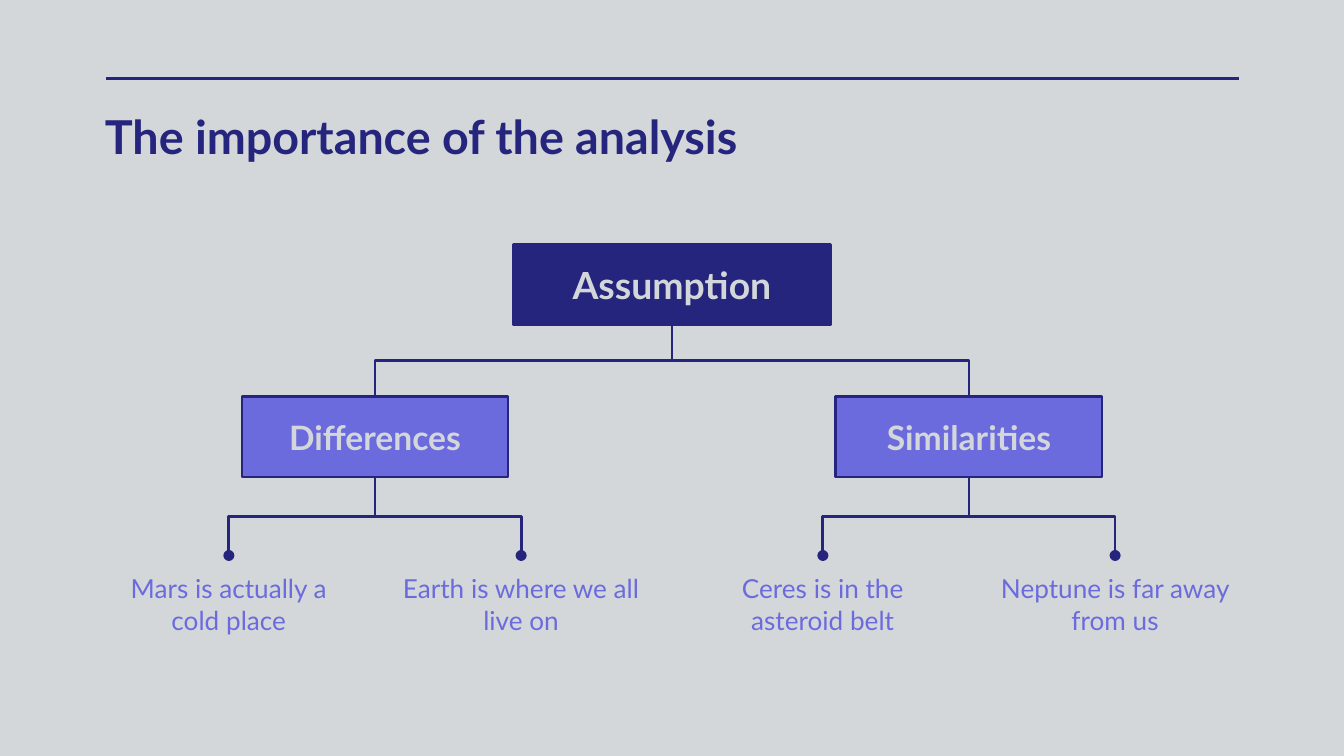
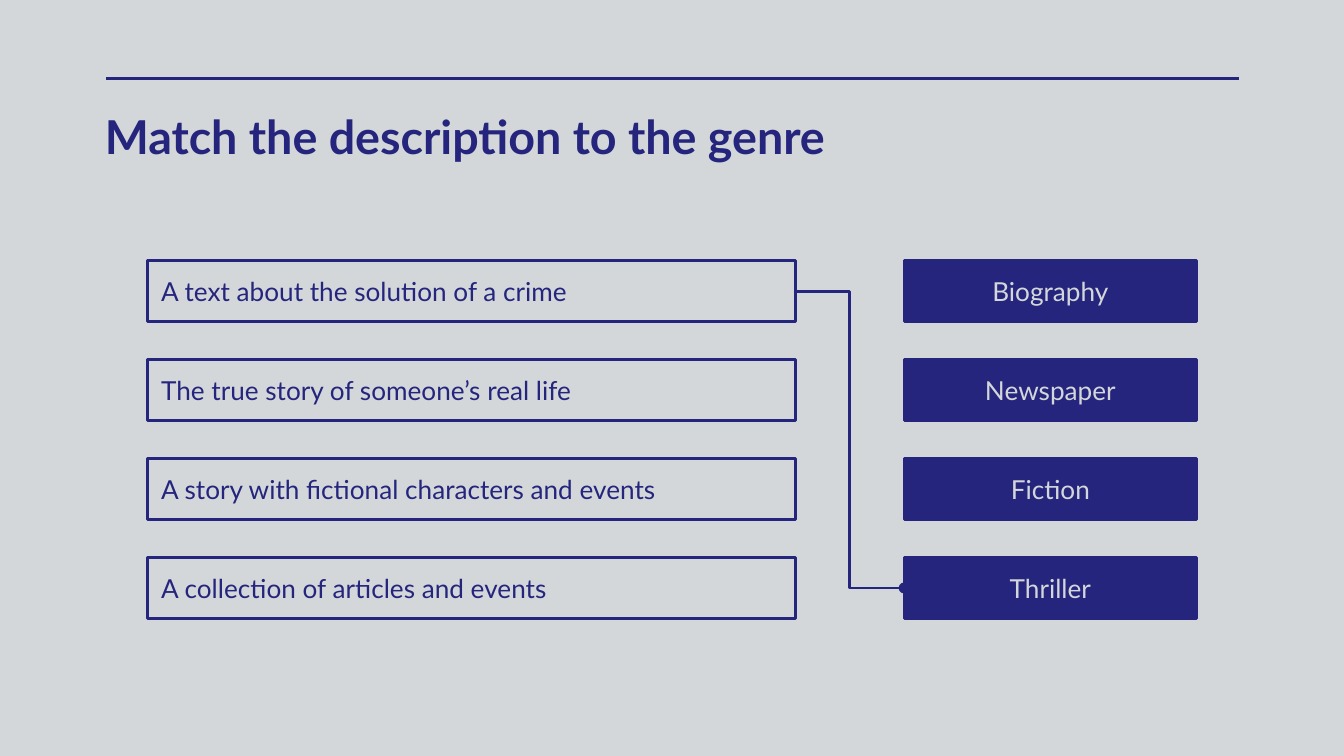
from dataclasses import dataclass
from typing import Any, Optional

import pptx
import pptx.dml.color
import pptx.enum.shapes
import pptx.enum.text
import pptx.oxml.ns
import pptx.util
from lxml import etree

Pt = pptx.util.Pt
RGBColor = pptx.dml.color.RGBColor
Align = pptx.enum.text.PP_ALIGN
Anchor = pptx.enum.text.MSO_ANCHOR
ConnectorKind = pptx.enum.shapes.MSO_CONNECTOR
TOP, LEFT, BOTTOM, RIGHT = range(4)


@dataclass(frozen=True)
class Theme:
    paper: RGBColor = RGBColor(0xD4, 0xD7, 0xD9)
    navy: RGBColor = RGBColor(0x25, 0x25, 0x7E)
    violet: RGBColor = RGBColor(0x6B, 0x6B, 0xDE)
    font: str = "Lato"
    title_size: float = 25
    root_size: float = 20
    branch_size: float = 18
    body_size: float = 14
    line_width: float = 1.5


THEME = Theme()


@dataclass(frozen=True)
class TextStyle:
    size: float
    color: RGBColor
    bold: bool = False
    align: Align = Align.CENTER
    anchor: Anchor = Anchor.MIDDLE
    side_inset: float = 0


@dataclass(frozen=True)
class BoxStyle:
    text: TextStyle
    fill: Optional[RGBColor] = None


@dataclass(frozen=True)
class Frame:
    left: float
    top: float
    width: float
    height: float

    def lengths(self) -> list[pptx.util.Length]:
        return [Pt(value) for value in (self.left, self.top, self.width, self.height)]


@dataclass(frozen=True)
class Branch:
    label: str
    side: int
    leaves: tuple[str, str]


TITLE = TextStyle(THEME.title_size, THEME.navy, True, Align.LEFT, Anchor.TOP)
LEAF = TextStyle(THEME.body_size, THEME.violet)
ROOT_BOX = BoxStyle(TextStyle(THEME.root_size, THEME.paper, True), THEME.navy)
BRANCH_BOX = BoxStyle(TextStyle(THEME.branch_size, THEME.paper, True), THEME.violet)
DESCRIPTION_BOX = BoxStyle(
    TextStyle(THEME.body_size, THEME.navy, align=Align.LEFT, side_inset=7.2))
GENRE_BOX = BoxStyle(TextStyle(THEME.body_size, THEME.paper, side_inset=7.2), THEME.navy)

BRANCHES = (
    Branch("Differences", -1,
           ("Mars is actually a cold place", "Earth is where we all live on")),
    Branch("Similarities", 1,
           ("Ceres is in the asteroid belt", "Neptune is far away from us")),
)
MATCHES = (
    ("A text about the solution of a crime", "Biography"),
    ("The true story of someone’s real life", "Newspaper"),
    ("A story with fictional characters and events", "Fiction"),
    ("A collection of articles and events", "Thriller"),
)


def apply_format(target: Any, values: dict[str, Any]) -> None:
    for name, value in values.items():
        setattr(target, name, value)


def centred_frame(center: float, top: float, width: float, height: float) -> Frame:
    return Frame(center - width / 2, top, width, height)


def write_text(shape: Any, text: str, style: TextStyle) -> None:
    frame = shape.text_frame
    apply_format(frame, {
        "word_wrap": True,
        "vertical_anchor": style.anchor,
        "margin_left": Pt(style.side_inset),
        "margin_right": Pt(style.side_inset),
        "margin_top": 0,
        "margin_bottom": 0,
    })
    paragraph = frame.paragraphs[0]
    paragraph.alignment = style.align
    run = paragraph.add_run()
    run.text = text
    apply_format(run.font, {
        "name": THEME.font, "size": Pt(style.size), "bold": style.bold})
    run.font.color.rgb = style.color


def add_text(slide: Any, frame: Frame, text: str, style: TextStyle) -> Any:
    shape = slide.shapes.add_textbox(*frame.lengths())
    write_text(shape, text, style)
    return shape


def style_line(line: Any) -> None:
    line.color.rgb = THEME.navy
    line.width = Pt(THEME.line_width)


def add_box(slide: Any, frame: Frame, text: str, style: BoxStyle) -> Any:
    shape = slide.shapes.add_shape(
        pptx.enum.shapes.MSO_SHAPE.RECTANGLE, *frame.lengths())
    shape.shadow.inherit = False
    if style.fill is None:
        shape.fill.background()
    else:
        shape.fill.solid()
        shape.fill.fore_color.rgb = style.fill
    style_line(shape.line)
    write_text(shape, text, style.text)
    return shape


def style_connector(connector: Any, dot: bool = False) -> None:
    style_line(connector.line)
    if dot:
        outline = connector.line._get_or_add_ln()
        etree.SubElement(outline, pptx.oxml.ns.qn("a:tailEnd"), type="oval")
    etree.SubElement(connector.element.spPr, pptx.oxml.ns.qn("a:effectLst"))


def add_elbow(slide: Any, start: Any, start_side: int, end: Any, end_side: int,
              dot: bool = False) -> Any:
    connector = slide.shapes.add_connector(ConnectorKind.ELBOW, 0, 0, 0, 0)
    connector.begin_connect(start, start_side)
    connector.end_connect(end, end_side)
    style_connector(connector, dot)
    return connector


def add_drop(slide: Any, parent: Any, child: Any, dot: bool = False) -> None:
    """Join a parent's bottom to a child's top, leaving and arriving vertically."""
    connector = add_elbow(slide, parent, BOTTOM, child, TOP, dot)
    start_x = parent.left + parent.width // 2
    start_y = parent.top + parent.height
    end_x = child.left + child.width // 2
    run, drop = abs(end_x - start_x), child.top - start_y
    goes_right = end_x > start_x
    apply_format(connector, {
        "left": (start_x + end_x - drop) // 2,
        "top": (start_y + child.top - run) // 2,
        "width": drop,
        "height": run,
        "rotation": 270 if goes_right else 90,
    })
    apply_format(connector.element.spPr.xfrm, {"flipH": goes_right, "flipV": False})


def add_titled_slide(presentation: Any, title: str) -> Any:
    slide = presentation.slides.add_slide(presentation.slide_layouts[6])
    slide.background.fill.solid()
    slide.background.fill.fore_color.rgb = THEME.paper
    rule = slide.shapes.add_connector(
        ConnectorKind.STRAIGHT, Pt(57), Pt(42), Pt(664), Pt(42))
    style_connector(rule)
    add_text(slide, Frame(56.2, 57.6, 608, 32.4), title, TITLE)
    return slide


def build_analysis_slide(presentation: Any) -> None:
    slide = add_titled_slide(presentation, "The importance of the analysis")
    center, branch_offset, leaf_offset = 360, 159.1, 78.3
    root = add_box(slide, centred_frame(center, 131, 170, 43.2), "Assumption", ROOT_BOX)
    for branch in BRANCHES:
        branch_center = center + branch.side * branch_offset
        box = add_box(slide, centred_frame(branch_center, 212.4, 142.6, 43.2),
                      branch.label, BRANCH_BOX)
        add_drop(slide, root, box)
        for side, text in zip((-1, 1), branch.leaves):
            frame = centred_frame(branch_center + side * leaf_offset, 297.6, 130.4, 51.8)
            leaf = add_text(slide, frame, text, LEAF)
            add_drop(slide, box, leaf, dot=True)


def build_matching_slide(presentation: Any) -> None:
    slide = add_titled_slide(presentation, "Match the description to the genre")
    first_top, pitch, height = 139.7, 53, 32.6
    descriptions, genres = [], []
    for row, (description, genre) in enumerate(MATCHES):
        top = first_top + row * pitch
        descriptions.append(add_box(
            slide, Frame(79.2, top, 347, height), description, DESCRIPTION_BOX))
        genres.append(add_box(slide, Frame(484.4, top, 156.6, height), genre, GENRE_BOX))
    add_elbow(slide, descriptions[0], RIGHT, genres[-1], LEFT, dot=True)


def main() -> None:
    presentation = pptx.Presentation()
    apply_format(presentation, {"slide_width": Pt(720), "slide_height": Pt(405)})
    build_analysis_slide(presentation)
    build_matching_slide(presentation)
    presentation.save("out.pptx")


if __name__ == "__main__":
    main()
